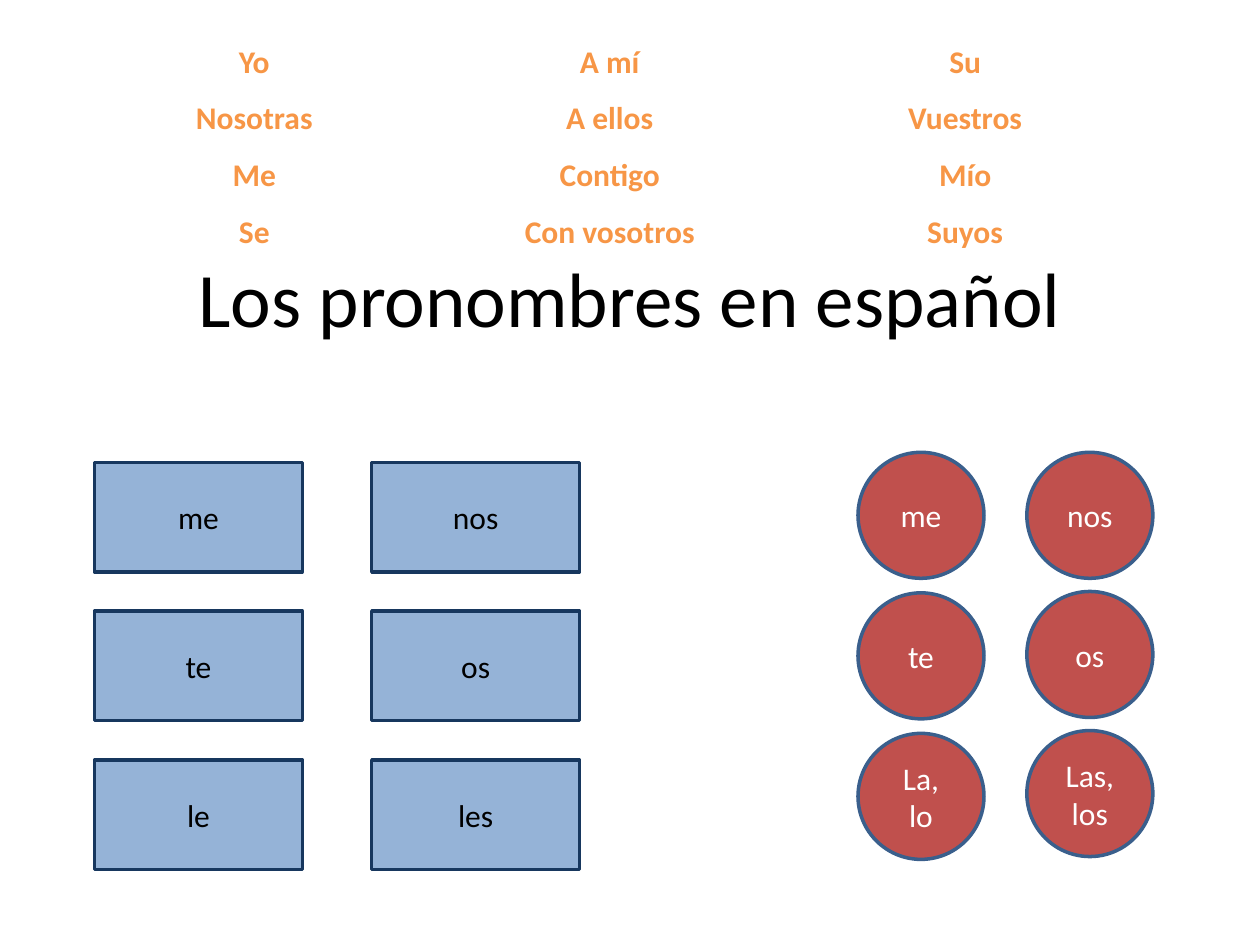
import pptx
import pptx.dml.color
import pptx.enum.shapes
import pptx.enum.text
import pptx.util

Pt = pptx.util.Pt
RGBColor = pptx.dml.color.RGBColor
Shape = pptx.enum.shapes.MSO_SHAPE
Anchor = pptx.enum.text.MSO_ANCHOR
AutoSize = pptx.enum.text.MSO_AUTO_SIZE

BLACK = RGBColor(0x00, 0x00, 0x00)
WHITE = RGBColor(0xFF, 0xFF, 0xFF)
ORANGE = RGBColor(0xF7, 0x96, 0x46)
LIGHT_BLUE = RGBColor(0x95, 0xB3, 0xD7)
NAVY = RGBColor(0x17, 0x37, 0x5E)
RED = RGBColor(0xC0, 0x50, 0x4D)
STEEL = RGBColor(0x3A, 0x5F, 0x8C)

PRONOUNS = [
    "Yo", "Nosotras", "Me", "Se",
    "A mí", "A ellos", "Contigo", "Con vosotros",
    "Su", "Vuestros", "Mío", "Suyos",
]
INDIRECT_COLUMNS = [
    (54, 85, ["me", "te", "le"]),
    (212.4, 85, ["nos", "os", "les"]),
]
DIRECT_COLUMNS = [
    (490.3, 80.3, ["me", "te", "La, lo"]),
    (586.8, 79.5, ["nos", "os", "Las, los"]),
]


def write(box, text, *, font="Calibri", size=18, color=BLACK, bold=False,
          spacing=1.0, anchor=Anchor.MIDDLE):
    frame = box.text_frame
    frame.word_wrap = True
    frame.vertical_anchor = anchor
    for index, line in enumerate(text.split("\n")):
        para = frame.paragraphs[0] if index == 0 else frame.add_paragraph()
        para.alignment = pptx.enum.text.PP_ALIGN.CENTER
        para.line_spacing = spacing
        span = para.add_run()
        span.text = line
        span.font.name = font
        span.font.size = Pt(size)
        span.font.bold = bold
        span.font.color.rgb = color


class PageBuilder:
    def __init__(self, page, line_width=2):
        self.page = page
        self.line_width = line_width

    def text(self, left, top, width, height, text, **style):
        box = self.page.shapes.add_textbox(Pt(left), Pt(top), Pt(width), Pt(height))
        write(box, text, **style)
        return box

    def columns(self, left, top, width, height, words, count, **style):
        box = self.text(left, top, width, height, "\n".join(words),
                        anchor=Anchor.TOP, **style)
        box.text_frame.auto_size = AutoSize.SHAPE_TO_FIT_TEXT
        box.text_frame._txBody.bodyPr.set("numCol", str(count))

    def shape(self, kind, left, top, width, height, text, fill, line, color):
        box = self.page.shapes.add_shape(kind, Pt(left), Pt(top), Pt(width), Pt(height))
        box.shadow.inherit = False
        box.fill.solid()
        box.fill.fore_color.rgb = fill
        box.line.color.rgb = line
        box.line.width = Pt(self.line_width)
        write(box, text, color=color)

    def stacks(self, kind, columns, top, width, height, **style):
        for left, pitch, words in columns:
            for row, word in enumerate(words):
                self.shape(kind, left, top + row * pitch, width, height, word, **style)


def main():
    deck = pptx.Presentation()
    deck.slide_width = Pt(720)
    deck.slide_height = Pt(540)
    builder = PageBuilder(deck.slides.add_slide(deck.slide_layouts[6]))

    builder.text(0, 111.6, 720, 116, "Los pronombres en español", size=44)
    builder.stacks(Shape.RECTANGLE, INDIRECT_COLUMNS, 264.2, 118.8, 62.6,
                   fill=LIGHT_BLUE, line=NAVY, color=BLACK)
    builder.stacks(Shape.OVAL, DIRECT_COLUMNS, 258.5, 72, 72,
                   fill=RED, line=STEEL, color=WHITE)
    builder.columns(36.7, 9.4, 623.5, 138.2, PRONOUNS, 3,
                    color=ORANGE, bold=True, spacing=1.5)

    deck.save("out.pptx")


if __name__ == "__main__":
    main()
